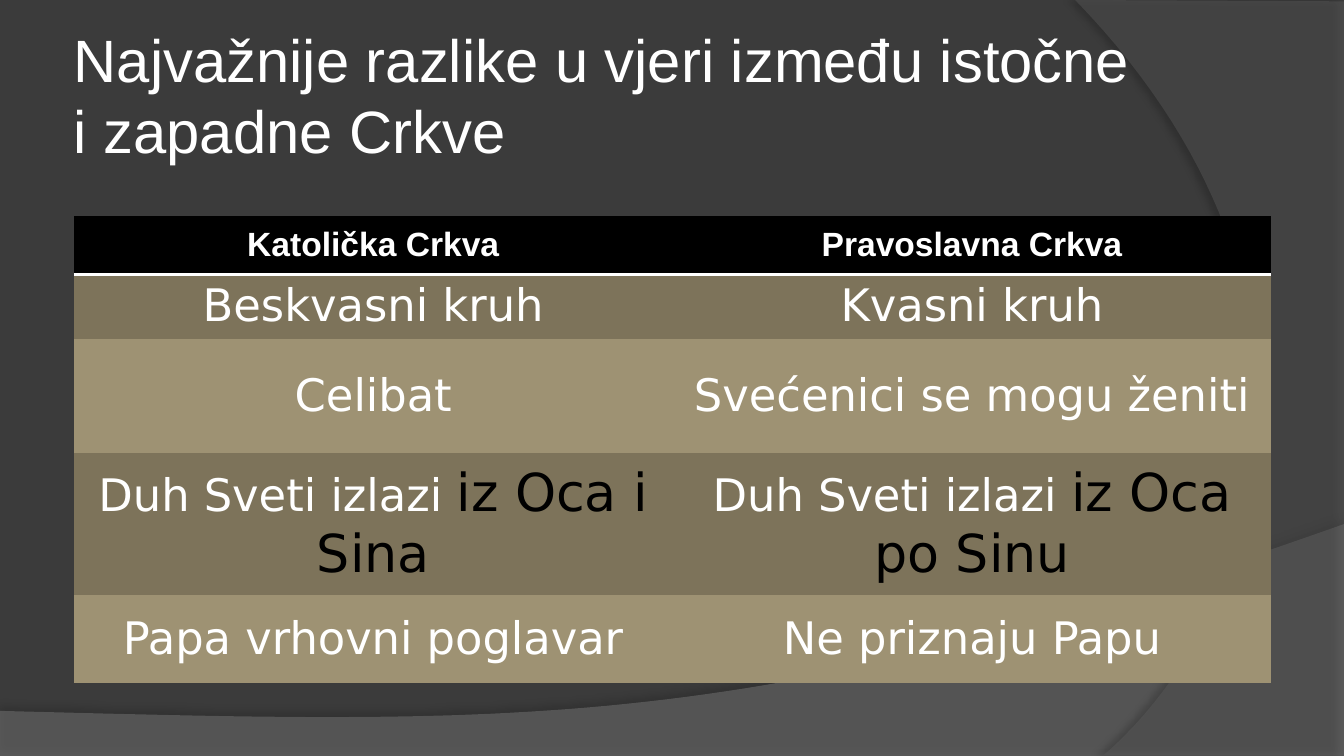
from lxml.etree import SubElement
from pptx import Presentation
from pptx.dml.color import RGBColor
from pptx.enum.text import MSO_ANCHOR, PP_ALIGN
from pptx.oxml import parse_xml
from pptx.oxml.ns import nsdecls, qn
from pptx.util import Inches, Pt

WHITE = RGBColor(0xFF, 0xFF, 0xFF)
BLACK = RGBColor(0, 0, 0)
BACKGROUND = RGBColor(0x3B, 0x3B, 0x3B)
WAVE = RGBColor(0x7F, 0x7F, 0x7F)
ARC = RGBColor(0x5E, 0x5E, 0x5E)
DARK_BAND = RGBColor(0x7D, 0x73, 0x5A)
LIGHT_BAND = RGBColor(0x9E, 0x92, 0x73)

HEADER = {"name": "Arial", "size": Pt(18), "bold": True}
BODY = {"name": "DejaVu Sans", "size": Pt(24), "bold": False}
TITLE = {"name": "Arial", "size": Pt(32), "bold": False}


def bezier(a, b, c, d, steps=60):
    points = []
    for i in range(steps + 1):
        t = i / steps
        weights = ((1 - t) ** 3, 3 * t * (1 - t) ** 2, 3 * t * t * (1 - t), t ** 3)
        points.append(tuple(sum(w * q[k] for w, q in zip(weights, (a, b, c, d))) for k in (0, 1)))
    return points


def add_run(p, text, fmt, color):
    r = p.add_run()
    r.text = text
    for key, value in fmt.items():
        setattr(r.font, key, value)
    r.font.color.rgb = color


prs = Presentation()
prs.slide_width, prs.slide_height = Inches(10), Inches(10) * 9 // 16
s = prs.slides.add_slide(prs.slide_layouts[6])
s.background.fill.solid()
s.background.fill.fore_color.rgb = BACKGROUND

wave = [(0, 5.63), (10, 5.63)] + bezier((10, 3.9), (5.59, 5.47), (3.91, 5.39), (0, 5.29))
arc = [(10, 0.01), (10, 5.62)] + bezier((8.21, 5.62), (9.35, 4.64), (10.18, 2.25), (8, 0))
for points, color, opacity, shade, dist, angle in (
    (wave, WAVE, 45, 35, 3.5, 270),
    (arc, ARC, 40, 45, 4, 180),
):
    points = [(Inches(x), Inches(y)) for x, y in points]
    builder = s.shapes.build_freeform(*points[0])
    builder.add_line_segments(points[1:], close=True)
    sp = builder.convert_to_shape()
    sp.shadow.inherit = False
    sp.fill.solid()
    sp.fill.fore_color.rgb = color
    sp.line.fill.background()
    spPr = sp._element.spPr
    SubElement(spPr.find(".//" + qn("a:srgbClr")), qn("a:alpha"), val=str(opacity * 1000))
    spPr.find(qn("a:effectLst")).append(parse_xml(
        f'<a:outerShdw {nsdecls("a")} blurRad="{Pt(4)}" dist="{Pt(dist)}" dir="{angle * 60000}"'
        f' algn="ctr" rotWithShape="0"><a:srgbClr val="{BLACK}">'
        f'<a:alpha val="{shade * 1000}"/></a:srgbClr></a:outerShdw>'))

tf = s.shapes.add_textbox(Inches(0.5), Inches(0.23), Inches(8.17), Inches(0.94)).text_frame
for key, value in {
    "word_wrap": True, "vertical_anchor": MSO_ANCHOR.MIDDLE,
    "margin_left": Inches(0.05), "margin_right": Inches(0.05),
    "margin_top": Inches(0.05), "margin_bottom": Inches(0.05),
}.items():
    setattr(tf, key, value)
add_run(tf.paragraphs[0], "Najvažnije razlike u vjeri između istočne i zapadne Crkve", TITLE, WHITE)

rows = [
    (0.43, ["Katolička Crkva"], ["Pravoslavna Crkva"]),
    (0.45, ["Beskvasni kruh"], ["Kvasni kruh"]),
    (0.85, ["Celibat"], ["Svećenici se mogu ženiti"]),
    (1.06, ["Duh Sveti izlazi ", "iz Oca i Sina"], ["Duh Sveti izlazi ", "iz Oca po Sinu"]),
    (0.65, ["Papa vrhovni poglavar"], ["Ne priznaju Papu"]),
]
table = s.shapes.add_table(len(rows), 2, Inches(0.55), Inches(1.61), Inches(8.91), Inches(3.47)).table
table._tbl.tblPr.find(qn("a:tableStyleId")).text = "{2D5ABB26-0587-4C30-8999-92F81FD0307C}"
for i, (height, *cells) in enumerate(rows):
    table.rows[i].height = Inches(height)
    for j, texts in enumerate(cells):
        cell = table.cell(i, j)
        cell.vertical_anchor = MSO_ANCHOR.MIDDLE
        cell.margin_top = cell.margin_bottom = Inches(0.04)
        cell.fill.solid()
        cell.fill.fore_color.rgb = BLACK if i == 0 else DARK_BAND if i % 2 else LIGHT_BAND
        p = cell.text_frame.paragraphs[0]
        p.alignment = PP_ALIGN.CENTER
        add_run(p, texts[0], BODY if i else HEADER, WHITE)
        for text in texts[1:]:
            add_run(p, text, BODY | {"size": Pt(28)}, BLACK)
        for k, (edge, boundary) in enumerate((("lnT", i), ("lnB", i + 1))):
            paint = f'<a:solidFill><a:srgbClr val="{WHITE}"/></a:solidFill>' if boundary == 1 else "<a:noFill/>"
            cell._tc.get_or_add_tcPr().insert(k, parse_xml(
                f'<a:{edge} {nsdecls("a")} w="{Pt(2)}">{paint}</a:{edge}>'))

prs.save("out.pptx")
